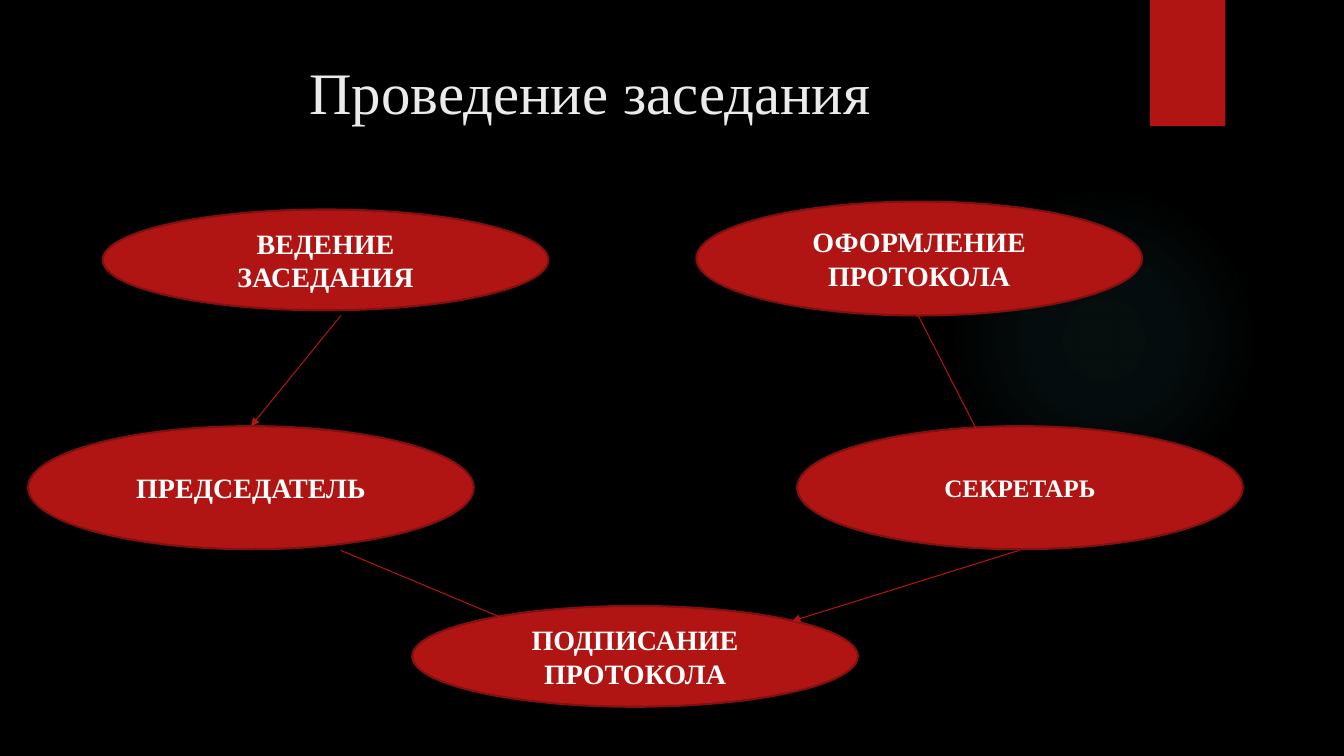
from lxml import etree
from pptx import Presentation
from pptx.dml.color import RGBColor
from pptx.enum.shapes import MSO_CONNECTOR as Connector, MSO_SHAPE as Shape
from pptx.enum.text import MSO_ANCHOR as Anchor, PP_ALIGN as Align
from pptx.oxml import parse_xml
from pptx.oxml.ns import nsdecls, qn
from pptx.util import Cm, Pt

RED, DARK_RED, WHITE = "B01513", "82100E", "FFFFFF"
OVAL_WIDTH = 11.23
OVALS = {
    "leading": ("ВЕДЕНИЕ ЗАСЕДАНИЯ", 2.59, 5.28, 2.54, 20),
    "minutes": ("ОФОРМЛЕНИЕ ПРОТОКОЛА", 17.55, 5.08, 2.87, 20),
    "chairman": ("ПРЕДСЕДАТЕЛЬ", 0.71, 10.74, 3.1, 20),
    "secretary": ("СЕКРЕТАРЬ", 20.09, 10.74, 3.1, 18),
    "signing": ("ПОДПИСАНИЕ ПРОТОКОЛА", 10.39, 15.27, 2.54, 20),
}
ARROWS = [
    ((8.59, 7.95), (6.32, 10.74), "chairman"),
    ((23.14, 7.95), (24.87, 11.33), None),
    ((8.59, 13.87), (13.13, 15.77), None),
    ((25.68, 13.87), (19.96, 15.65), None),
]


def color(value):
    return RGBColor.from_string(value)


def paint(fill, value):
    fill.solid()
    fill.fore_color.rgb = color(value)


def apply_format(target, values):
    for name, value in values.items():
        setattr(target, name, value)


def write_text(box, text, size, value, bold, anchor):
    frame = box.text_frame
    apply_format(frame, {"word_wrap": True, "vertical_anchor": anchor})
    para = frame.paragraphs[0]
    para.alignment = Align.CENTER
    span = para.add_run()
    span.text = text
    apply_format(span.font, {"name": "Times New Roman", "size": Pt(size), "bold": bold})
    span.font.color.rgb = color(value)


def add_box(page, kind, left, top, width, height, fill=RED):
    box = page.shapes.add_shape(kind, Cm(left), Cm(top), Cm(width), Cm(height))
    box.shadow.inherit = False
    paint(box.fill, fill)
    box.line.fill.background()
    return box


def add_glow(page):
    glow = add_box(page, Shape.OVAL, 23.9, 4.65, 7.82, 7.82)
    stops = "".join(
        f'<a:gs pos="{place * 1000}"><a:srgbClr val="50B9C1">'
        f'<a:alpha val="{alpha * 1000}"/></a:srgbClr></a:gs>'
        for place, alpha in ((0, 7), (36, 6), (69, 0))
    )
    gradient = parse_xml(
        f'<a:gradFill {nsdecls("a")}><a:gsLst>{stops}</a:gsLst><a:path path="circle">'
        '<a:fillToRect l="50000" t="50000" r="50000" b="50000"/></a:path></a:gradFill>'
    )
    properties = glow.element.spPr
    properties.replace(properties.find(qn("a:solidFill")), gradient)


def add_ribbon(page):
    ribbon = add_box(page, Shape.RECTANGLE, 28.98, 0, 1.9, 3.18)
    effects = ribbon.element.spPr.find(qn("a:effectLst"))
    effects.append(parse_xml(
        f'<a:outerShdw {nsdecls("a")} blurRad="{Pt(3)}" dist="{Pt(2)}" dir="5400000">'
        '<a:srgbClr val="000000"><a:alpha val="45000"/></a:srgbClr></a:outerShdw>'
    ))


def add_oval(page, text, left, top, height, size):
    oval = add_box(page, Shape.OVAL, left, top, OVAL_WIDTH, height)
    paint(oval.line.fill, DARK_RED)
    oval.line.width = Pt(1.5)
    write_text(oval, text, size, WHITE, True, Anchor.MIDDLE)
    return oval


def add_arrow(page, start, end, target):
    arrow = page.shapes.add_connector(Connector.STRAIGHT, *map(Cm, start + end))
    if target is not None:
        arrow.end_connect(target, 0)
    paint(arrow.line.fill, RED)
    arrow.line.width = Pt(0.75)
    etree.SubElement(arrow.line._get_or_add_ln(), qn("a:tailEnd"), type="triangle")
    etree.SubElement(arrow.element.spPr, qn("a:effectLst"))


def add_title(page, text):
    title = page.shapes.title
    apply_format(title, {"left": Cm(1.8), "top": Cm(1.27), "width": Cm(26.14), "height": Cm(3.89)})
    write_text(title, text, 42, "EBEBEB", False, Anchor.TOP)


def main():
    deck = Presentation()
    apply_format(deck, {"slide_width": Cm(33.87), "slide_height": Cm(19.05)})
    page = deck.slides.add_slide(deck.slide_layouts[5])
    paint(page.background.fill, "000000")
    add_glow(page)
    add_ribbon(page)
    add_title(page, "Проведение заседания")
    ovals = {name: add_oval(page, *values) for name, values in OVALS.items()}
    for start, end, target in ARROWS:
        add_arrow(page, start, end, ovals.get(target))
    deck.save("out.pptx")


if __name__ == "__main__":
    main()
